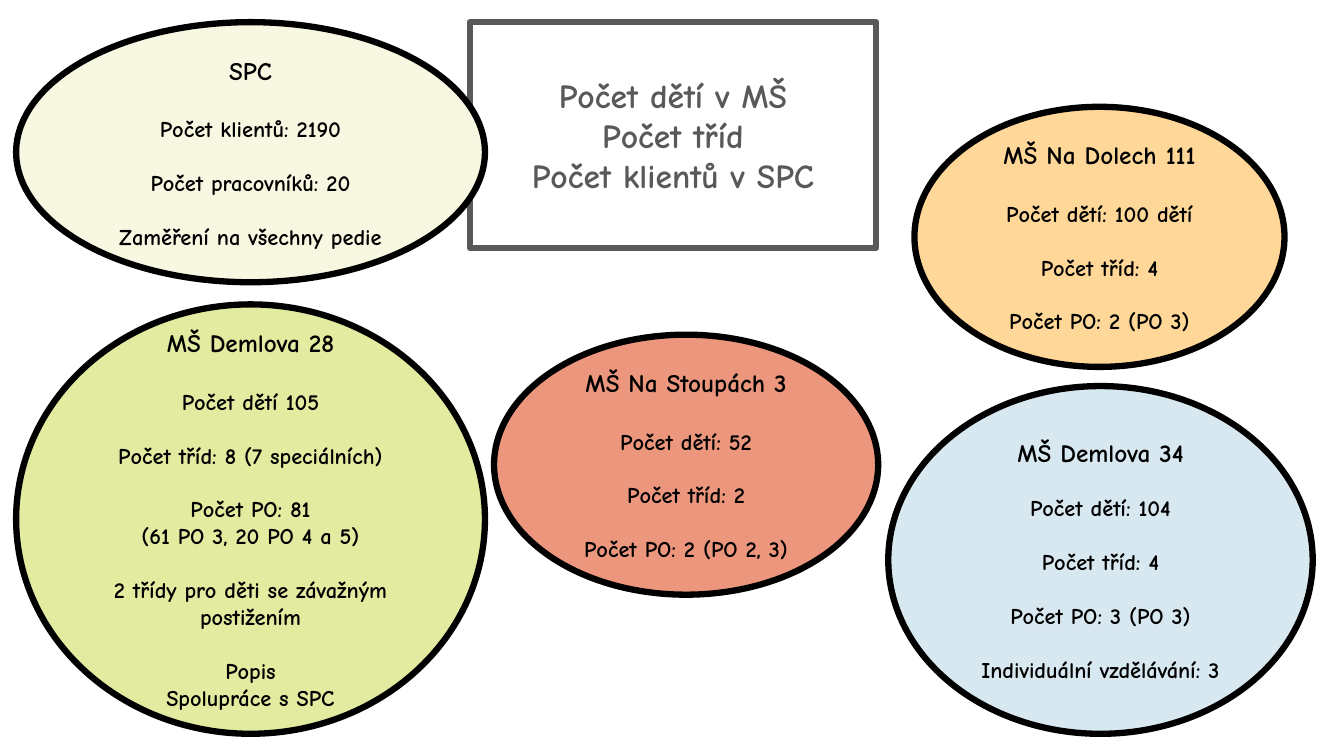
from lxml import etree
from pptx import Presentation
from pptx.dml.color import RGBColor as RGB
from pptx.enum.shapes import MSO_SHAPE as SHAPE
from pptx.enum.text import MSO_ANCHOR as ANCHOR, MSO_AUTO_SIZE as FIT, PP_ALIGN as ALIGN
from pptx.oxml.ns import qn
from pptx.util import Inches, Pt

BLACK = RGB(0, 0, 0)
GREY = RGB(0x59, 0x59, 0x59)
WHITE = RGB(0xFF, 0xFF, 0xFF)
GREEN = RGB(0xE2, 0xEB, 0xA0)
CREAM = RGB(0xF7, 0xF7, 0xE2)
BLUE = RGB(0xD8, 0xE8, 0xF1)
AMBER = RGB(0xFF, 0xD8, 0x99)
CORAL = RGB(0xEC, 0x97, 0x7D)
FONT = "Comic Neue"
LINE = 1.2

TOPIC = ["Počet dětí v MŠ", "Počet tříd", "Počet klientů v SPC"]
TOPIC_BOX = (4.66, 0.22, 4.03, 2.24)

# box, fill, gap under the heading in points, heading, groups of lines
SITES = [
    ((0.16, 3.02, 4.65, 4.26), GREEN, 18, "MŠ Demlova 28", [
        ["Počet dětí 105"],
        ["Počet tříd: 8 (7 speciálních)"],
        ["Počet PO: 81", "(61 PO 3, 20 PO 4 a 5)"],
        ["2 třídy pro děti se závažným postižením"],
        ["Popis", "Spolupráce s SPC"]]),
    ((0.16, 0.22, 4.65, 2.58), CREAM, 18, "SPC", [
        ["Počet klientů: 2190"],
        ["Počet pracovníků: 20"],
        ["Zaměření na všechny pedie"]]),
    ((8.81, 3.83, 4.21, 3.45), BLUE, 16, "MŠ Demlova 34", [
        ["Počet dětí: 104"],
        ["Počet tříd: 4"],
        ["Počet PO: 3 (PO 3)"],
        ["Individuální vzdělávání: 3"]]),
    ((9.07, 1.06, 3.67, 2.58), AMBER, 18, "MŠ Na Dolech 111", [
        ["Počet dětí: 100 dětí"],
        ["Počet tříd: 4"],
        ["Počet PO: 2 (PO 3)"]]),
    ((4.9, 3.32, 3.81, 2.58), CORAL, 18, "MŠ Na Stoupách 3", [
        ["Počet dětí: 52"],
        ["Počet tříd: 2"],
        ["Počet PO: 2 (PO 2, 3)"]]),
]


def paint(shape, fill, edge):
    """Fill and outline an oval."""
    shape.fill.solid()
    shape.fill.fore_color.rgb = fill
    shape.line.color.rgb = edge
    shape.line.width = Pt(4.5)


def write(shape, rows, color):
    """Write rows of text, size and space before, centred in a shape."""
    frame = shape.text_frame
    frame.word_wrap = True
    frame.auto_size = FIT.NONE
    frame.vertical_anchor = ANCHOR.MIDDLE
    frame.text = "\n".join(text for text, size, gap in rows)
    for para, (text, size, gap) in zip(frame.paragraphs, rows):
        para.alignment = ALIGN.CENTER
        para.space_before = Pt(gap)
        font = para.runs[0].font
        font.name, font.size, font.bold = FONT, Pt(size), True
        font.color.rgb = color


def add_topic(slide):
    """Shape the title placeholder as an oval."""
    title = slide.shapes.title
    title.left, title.top, title.width, title.height = map(Inches, TOPIC_BOX)
    geom = etree.SubElement(title.element.spPr, qn("a:prstGeom"), prst="ellipse")
    etree.SubElement(geom, qn("a:avLst"))
    paint(title, WHITE, GREY)
    write(title, [(text, 24, 0) for text in TOPIC], GREY)


def add_site(slide, box, fill, gap, head, groups):
    """Add one oval with a heading and spaced groups of lines."""
    oval = slide.shapes.add_shape(SHAPE.OVAL, *map(Inches, box))
    oval.shadow.inherit = False
    paint(oval, fill, BLACK)
    rows = [(head, 18, 0)]
    for group in groups:
        for text in group:
            rows.append((text, 16, round(gap * LINE, 1)))
            gap = 0
        gap = 16
    write(oval, rows, BLACK)


def main():
    """Build the slide and save it."""
    deck = Presentation()
    deck.slide_width, deck.slide_height = Inches(13.33), Inches(7.5)
    slide = deck.slides.add_slide(deck.slide_layouts[5])
    add_topic(slide)
    for site in SITES:
        add_site(slide, *site)
    deck.save("out.pptx")


if __name__ == "__main__":
    main()
